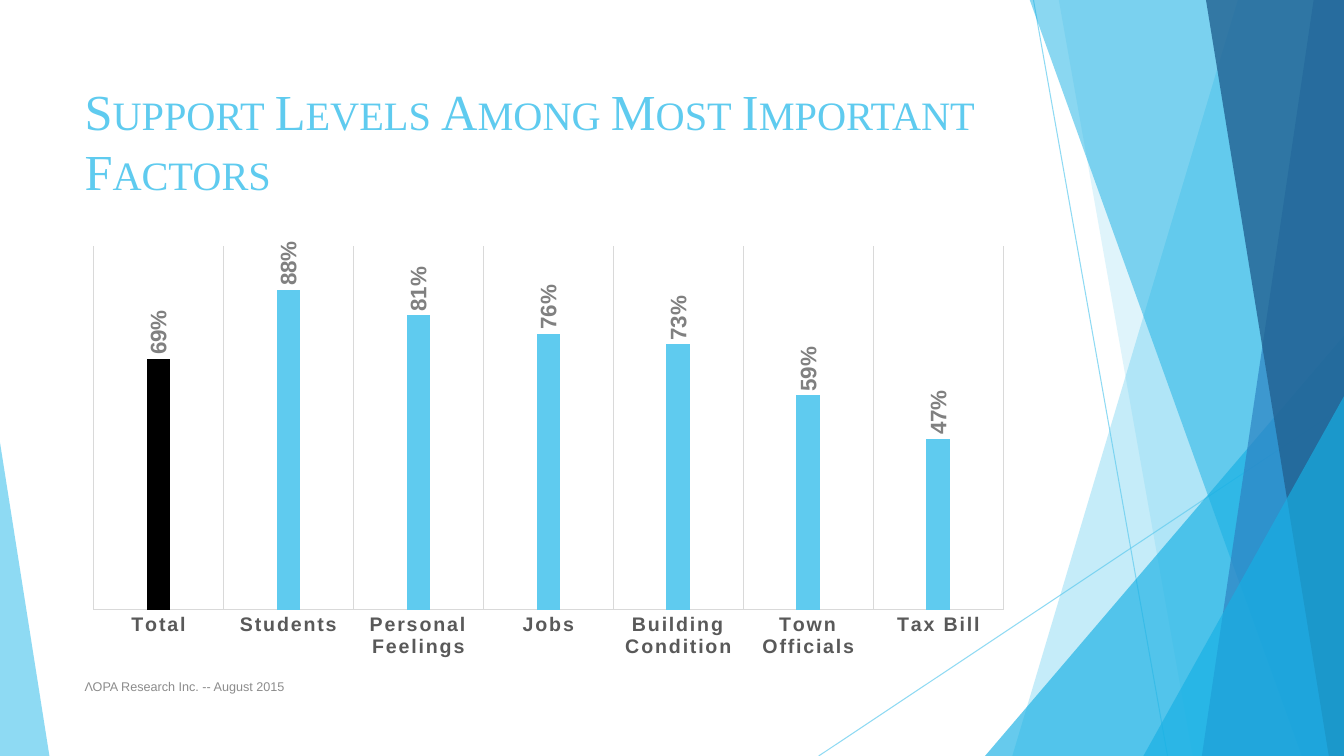
from lxml.etree import SubElement
from pptx import Presentation
from pptx.chart.data import CategoryChartData
from pptx.dml.color import RGBColor
from pptx.enum.chart import XL_CHART_TYPE, XL_LABEL_POSITION, XL_TICK_MARK
from pptx.enum.shapes import MSO_CONNECTOR, MSO_SHAPE
from pptx.enum.text import MSO_ANCHOR
from pptx.oxml.ns import qn
from pptx.util import Inches, Pt

COLORS = {
    "sky": "5FCBEF", "cyan": "17B0E4", "blue": "2E83C3", "navy": "226292",
    "black": "000000", "label": "808080", "axis": "595959",
    "grid": "D9D9D9", "note": "8C8C8C",
}
WIDTH, HEIGHT, TOP = 13.33, 7.5, -0.01
LEFT, SPAN = 0.74, 9.4
SUPPORT = {
    "Total": 0.69, "Students": 0.88, "Personal Feelings": 0.81, "Jobs": 0.76,
    "Building Condition": 0.73, "Town Officials": 0.59, "Tax Bill": 0.47,
}


def rgb(name):
    return RGBColor.from_string(COLORS[name])


def fade(part, alpha):
    """Set the opacity, in percent, of the solid colour in a shape's XML."""
    color = next(part.iter(qn("a:srgbClr")))
    SubElement(color, qn("a:alpha")).set("val", str(alpha * 1000))


def style(font, size, color, face="Arial", bold=False):
    font.size, font.name, font.bold = Pt(size), face, bold
    font.color.rgb = rgb(color)


def paint(shape, color, alpha):
    shape.shadow.inherit = False
    shape.fill.solid()
    shape.fill.fore_color.rgb = rgb(color)
    shape.line.fill.background()
    fade(shape._element.spPr, alpha)


def add_line(slide, start, end):
    line = slide.shapes.add_connector(
        MSO_CONNECTOR.STRAIGHT, *[Inches(n) for n in (*start, *end)])
    line.line.color.rgb = rgb("sky")
    line.line.width = Pt(0.75)
    props = line._element.spPr
    fade(props, 70)
    SubElement(props, qn("a:effectLst"))


def add_band(slide, top, foot, color, alpha):
    """Fill from a slanted edge to the right side of the slide."""
    pen = slide.shapes.build_freeform(Inches(top), Inches(TOP))
    points = [(WIDTH, TOP), (WIDTH, HEIGHT), (foot, HEIGHT)]
    pen.add_line_segments([(Inches(x), Inches(y)) for x, y in points])
    paint(pen.convert_to_shape(), color, alpha)


def add_wedge(slide, left, top, width, apex, color, alpha):
    """Draw a triangle that stands on the bottom of the slide."""
    wedge = slide.shapes.add_shape(
        MSO_SHAPE.ISOSCELES_TRIANGLE, Inches(left), Inches(top),
        Inches(width), Inches(HEIGHT - top))
    wedge.adjustments[0] = apex
    paint(wedge, color, alpha)


def add_text(slide, text, top, width, height, size, color, face):
    box = slide.shapes.add_textbox(
        Inches(LEFT), Inches(top), Inches(width), Inches(height))
    frame = box.text_frame
    frame.word_wrap = True
    frame.vertical_anchor = MSO_ANCHOR.MIDDLE
    frame.text = text
    run = frame.paragraphs[0].runs[0]
    style(run.font, size, color, face)
    return run


def set_plot(chart, x, y, width, height):
    """Fix the inner plot area as fractions of the chart."""
    area = chart._chartSpace.chart.plotArea
    for old in area.findall(qn("c:layout")):
        area.remove(old)
    layout = SubElement(area, qn("c:layout"))
    area.insert(0, layout)
    manual = SubElement(layout, qn("c:manualLayout"))
    values = {"layoutTarget": "inner", "xMode": "edge", "yMode": "edge",
              "x": x, "y": y, "w": width, "h": height}
    for tag, value in values.items():
        SubElement(manual, qn("c:" + tag)).set("val", str(value))


def add_bars(slide):
    data = CategoryChartData(number_format="0%")
    data.categories = list(SUPPORT)
    data.add_series("Support", list(SUPPORT.values()))
    chart = slide.shapes.add_chart(
        XL_CHART_TYPE.COLUMN_CLUSTERED, Inches(LEFT), Inches(2.36),
        Inches(SPAN), Inches(4.24), data).chart
    chart.has_legend = chart.has_title = False
    style(chart.font, 10, "black")
    set_plot(chart, 0.02, 0.02, 0.96, 0.85)

    plot = chart.plots[0]
    plot.vary_by_categories = False
    plot.gap_width, plot.overlap = 444, -90
    bars = plot.series[0]
    for part, color in ((bars, "sky"), (bars.points[0], "black")):
        part.format.fill.solid()
        part.format.fill.fore_color.rgb = rgb(color)

    plot.has_data_labels = True
    labels = plot.data_labels
    labels.show_value = True
    labels.position = XL_LABEL_POSITION.OUTSIDE_END
    labels.number_format, labels.number_format_is_linked = "0%", False
    style(labels.font, 16, "label", bold=True)
    body = next(labels._element.iter(qn("a:bodyPr")))
    body.set("rot", "-5400000")
    body.set("vert", "horz")

    scale = chart.value_axis
    scale.minimum_scale, scale.maximum_scale = 0, 1
    scale.has_major_gridlines = scale.visible = False
    axis = chart.category_axis
    axis.major_tick_mark = axis.minor_tick_mark = XL_TICK_MARK.NONE
    axis.has_major_gridlines = True
    for part in (axis, axis.major_gridlines):
        part.format.line.color.rgb = rgb("grid")
        part.format.line.width = Pt(0.75)
    style(axis.tick_labels.font, 14, "axis", bold=True)
    next(axis._element.iter(qn("a:defRPr"))).set("spc", "120")


def add_decor(slide):
    add_line(slide, (10.25, 0), (11.58, HEIGHT))
    add_line(slide, (WIDTH, 4.03), (8.12, HEIGHT))
    add_band(slide, 12.28, 10.04, "sky", 36)
    add_band(slide, 10.5, 11.83, "sky", 20)
    add_wedge(slide, 9.77, 3.33, 3.56, 1, "cyan", 66)
    add_band(slide, 10.21, 12.91, "cyan", 50)
    add_band(slide, 13.03, 11.92, "blue", 70)
    add_band(slide, 11.96, 13.18, "navy", 80)
    add_wedge(slide, 11.34, 3.93, 1.99, 1, "cyan", 66)
    add_wedge(slide, 0, 4.39, 0.49, 0, "sky", 70)


def main():
    deck = Presentation()
    deck.slide_width, deck.slide_height = Inches(WIDTH), Inches(HEIGHT)
    slide = deck.slides.add_slide(deck.slide_layouts[6])
    add_decor(slide)
    title = add_text(slide, "Support Levels Among Most Important Factors",
                     0.67, SPAN, 1.44, 36, "sky", "Times New Roman")
    title.font._element.set("cap", "small")
    add_bars(slide)
    add_text(slide, "ΛΟΡΑ Research Inc. -- August 2015",
             6.61, 6.89, 0.4, 9, "note", "Arial")
    deck.save("out.pptx")


if __name__ == "__main__":
    main()
